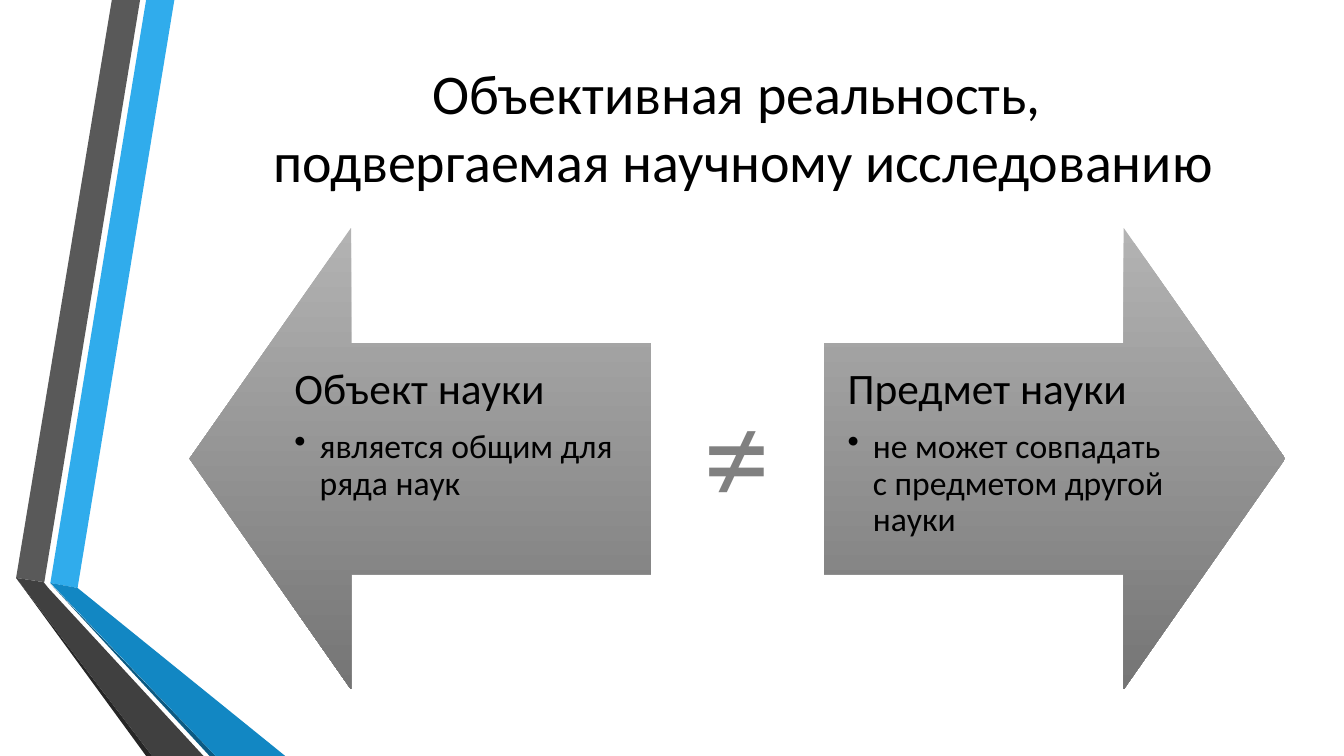
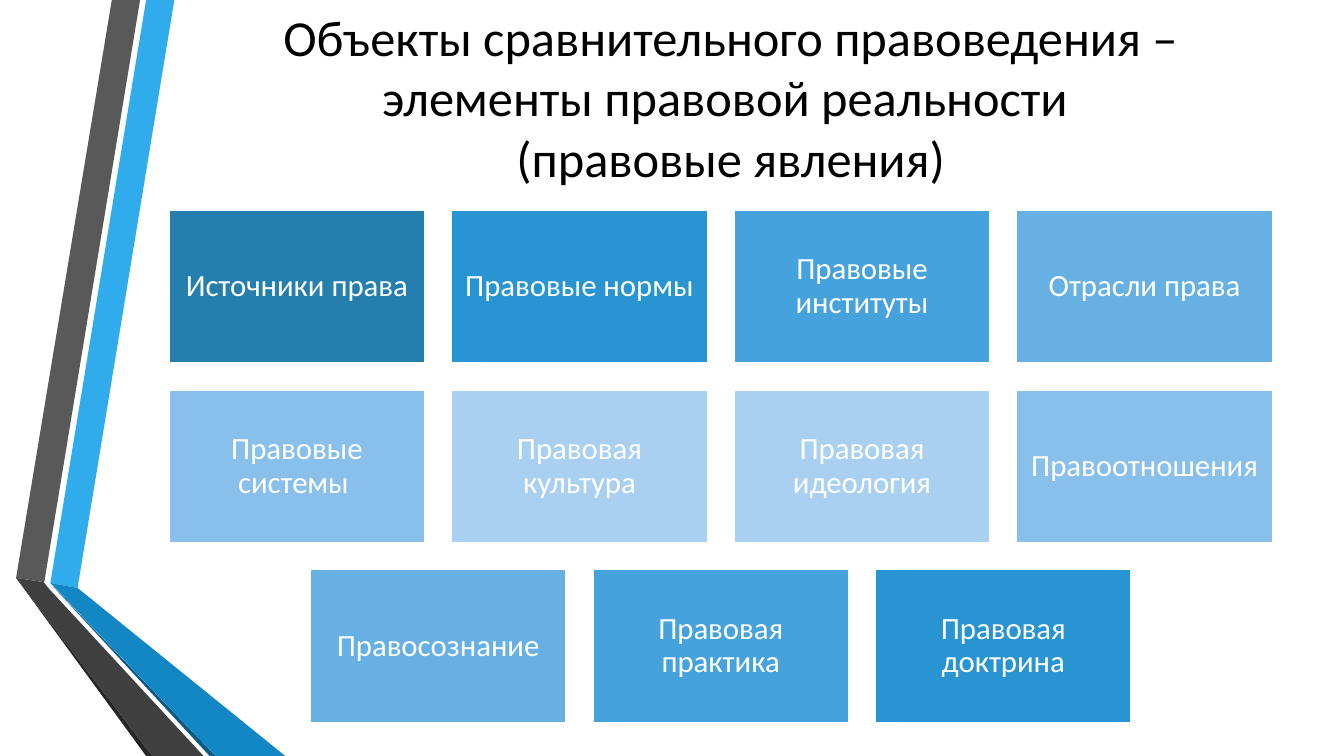
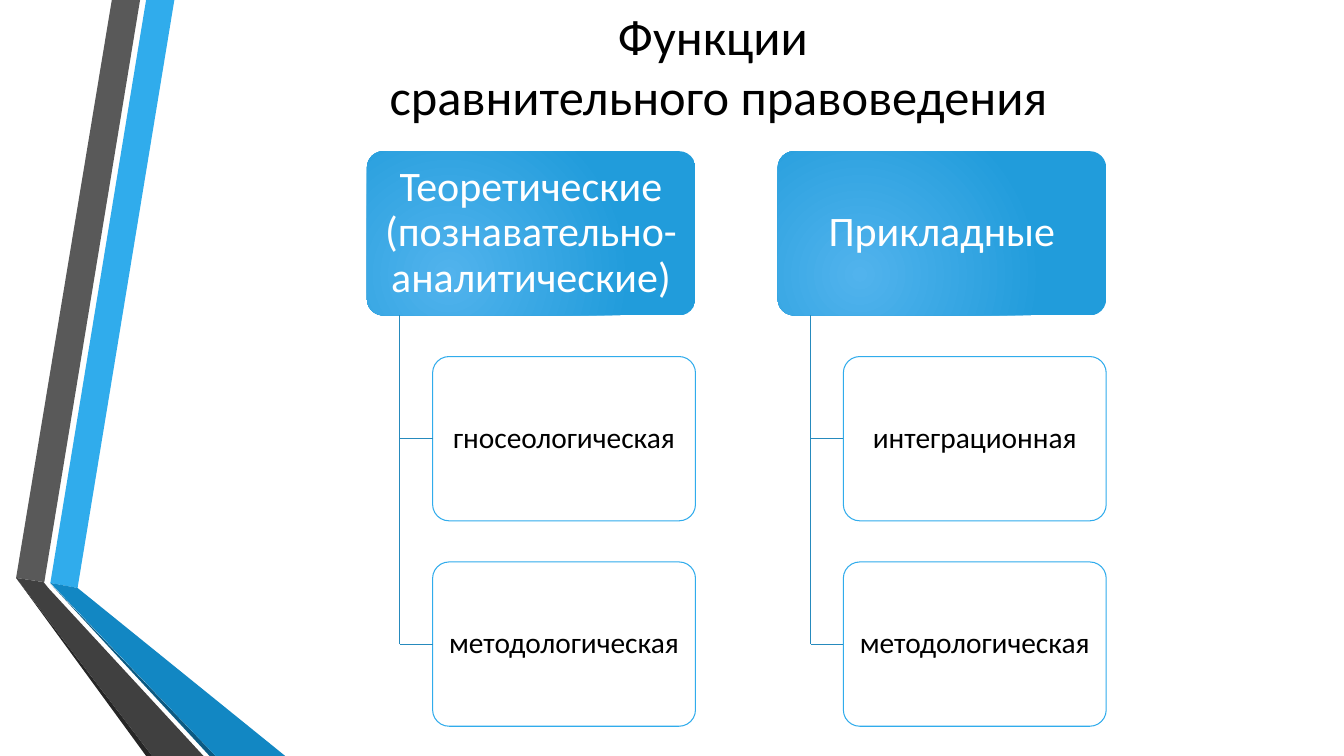
from dataclasses import dataclass

from lxml.etree import SubElement
from pptx import Presentation
from pptx.dml.color import RGBColor
from pptx.enum.shapes import MSO_CONNECTOR, MSO_SHAPE
from pptx.enum.text import MSO_ANCHOR, PP_ALIGN
from pptx.oxml.ns import qn
from pptx.util import Emu, Pt

COLUMNS, ROWS = 80, 45


@dataclass(frozen=True)
class Theme:
    font: str = "Calibri"
    ink: str = "000000"
    paper: str = "FFFFFF"
    sign: str = "808080"
    accent: str = "30ACEC"
    branch: str = "268ABD"
    arrow: tuple = ("B3B3B3", "757575")
    header: tuple = ("51B3ED", "219CDB")
    tiles: tuple = ("247FAF", "2994D2", "46A2DD", "66B0E4", "88BFEB", "A9D0F1")
    title_large: int = 40
    title: int = 36
    sign_size: int = 96
    arrow_head: int = 31
    arrow_point: int = 24
    tile_size: int = 22
    header_size: int = 30
    child_size: int = 21
    tight: float = 0.9
    thin: float = 0.75
    edge: float = 1.75


THEME = Theme()

# Folded ribbon at the left edge: colour and corners in grid units
RIBBON = [
    ("30ACEC", [(3, 34.7), (4.62, 35), (10.38, 0), (8.7, 0)]),
    ("595959", [(8.34, 0), (6.66, 0), (0.96, 34.4), (2.64, 34.65)]),
    ("262626", [(0.96, 34.4), (8.7, 45), (9.06, 45)]),
    ("0C5A82", [(3, 34.74), (12.48, 45), (12.84, 45)]),
    ("1287C3", [(3, 34.7), (12.84, 45), (16.98, 45), (4.62, 35)]),
    ("404040", [(12.12, 45), (2.88, 35), (2.6, 34.65), (0.96, 34.4), (9.06, 45)]),
]


def rgb(value):
    return RGBColor.from_string(value)


def assign(target, **values):
    for name, value in values.items():
        setattr(target, name, value)


class Deck:
    def __init__(self, theme):
        self.theme = theme
        self.file = Presentation()
        assign(self.file, slide_width=Emu(12192000), slide_height=Emu(6858000))
        self.column = self.file.slide_width / COLUMNS
        self.row = self.file.slide_height / ROWS
        self.slide = None

    def place(self, *lengths):
        """Turn alternating columns and rows into slide lengths."""
        return [Emu(round(length * (self.row if i % 2 else self.column)))
                for i, length in enumerate(lengths)]

    def new_slide(self):
        self.slide = self.file.slides.add_slide(self.file.slide_layouts[6])
        for color, corners in RIBBON:
            points = [self.place(*corner) for corner in corners]
            builder = self.slide.shapes.build_freeform(*points[0], scale=1.0)
            builder.add_line_segments(points[1:], close=True)
            self.finish(builder.convert_to_shape(), color)

    def finish(self, shape, fill, line=None, width=0):
        shape.shadow.inherit = False
        if isinstance(fill, tuple):
            shape.fill.gradient()
            for stop, color in zip(shape.fill.gradient_stops, fill):
                stop.color.rgb = rgb(color)
        else:
            shape.fill.solid()
            shape.fill.fore_color.rgb = rgb(fill)
        if line:
            shape.line.color.rgb = rgb(line)
            shape.line.width = Pt(width)
        else:
            shape.line.fill.background()

    def frame(self, holder, across=0.6, down=0.3, anchor=MSO_ANCHOR.MIDDLE):
        side, edge = self.place(across, down)
        assign(holder.text_frame, word_wrap=True, vertical_anchor=anchor,
               margin_left=side, margin_right=side,
               margin_top=edge, margin_bottom=edge)
        return holder.text_frame.paragraphs[0]

    def compose(self, paragraph, text, size, color, **layout):
        assign(paragraph, text=text, **layout)
        for run in paragraph.runs:
            assign(run.font, name=self.theme.font, size=Pt(size))
            run.font.color.rgb = rgb(color)

    def text(self, box, text, size, color, align):
        holder = self.slide.shapes.add_textbox(*self.place(*box))
        self.compose(self.frame(holder), text, size, color, alignment=align)

    def title(self, box, text, size):
        self.text(box, text, size, self.theme.ink, PP_ALIGN.CENTER)

    def shape(self, kind, box, fill, line=None, width=0):
        shape = self.slide.shapes.add_shape(kind, *self.place(*box))
        self.finish(shape, fill, line, width)
        return shape

    def label(self, shape, text, size, color, across, down):
        self.compose(self.frame(shape, across, down), text, size, color,
                     alignment=PP_ALIGN.CENTER, line_spacing=self.theme.tight)

    def arrow(self, kind, box, heading, point):
        arrow = self.shape(kind, box, self.theme.arrow)
        arrow.fill.gradient_angle = 270
        arrow.adjustments[0], arrow.adjustments[1] = 0.5, 0.35
        layout = dict(alignment=PP_ALIGN.LEFT, line_spacing=self.theme.tight)
        self.compose(self.frame(arrow, 1.44, 1.44, MSO_ANCHOR.TOP), heading,
                     self.theme.arrow_head, self.theme.ink,
                     space_after=Pt(11), **layout)
        bullet = arrow.text_frame.add_paragraph()
        self.compose(bullet, point, self.theme.arrow_point, self.theme.ink, **layout)
        props = bullet._p.get_or_add_pPr()
        indent = self.place(1.5)[0]
        props.set("marL", str(indent))
        props.set("indent", str(-indent))
        SubElement(props, qn("a:buChar")).set("char", "•")

    def tile(self, box, text, fill):
        tile = self.shape(MSO_SHAPE.RECTANGLE, box, fill,
                          self.theme.paper, self.theme.edge)
        self.label(tile, text, self.theme.tile_size, self.theme.paper, 0.54, 0.54)

    def header(self, box, text):
        header = self.shape(MSO_SHAPE.ROUNDED_RECTANGLE, box, self.theme.header)
        header.adjustments[0] = 0.1
        gradient = header._element.spPr.find(qn("a:gradFill"))
        glow = SubElement(gradient, qn("a:path"))
        glow.set("path", "circle")
        focus = SubElement(glow, qn("a:fillToRect"))
        for side, share in dict(l=50, t=100, r=100, b=50).items():
            focus.set(side, str(share * 1000))
        gradient.replace(gradient.find(qn("a:lin")), glow)
        self.label(header, text, self.theme.header_size, self.theme.paper, 0.36, 0.24)

    def child(self, box, text):
        child = self.shape(MSO_SHAPE.ROUNDED_RECTANGLE, box, self.theme.paper,
                           self.theme.accent, self.theme.thin)
        child.adjustments[0] = 0.1
        self.label(child, text, self.theme.child_size, self.theme.ink, 0.24, 0.18)
        return child

    def line(self, start, end, target=None):
        line = self.slide.shapes.add_connector(
            MSO_CONNECTOR.STRAIGHT, *self.place(*start, *end))
        line.line.color.rgb = rgb(self.theme.branch)
        line.line.width = Pt(self.theme.thin)
        SubElement(line._element.spPr, qn("a:effectLst"))
        if target is not None:
            line.end_connect(target, 1)


def object_and_subject(deck):
    deck.new_slide()
    deck.title((11.34, 1.74, 65.76, 11.52),
               "Объективная реальность, \vподвергаемая научному исследованию",
               deck.theme.title_large)
    side, top = 27.48, 13.56
    deck.arrow(MSO_SHAPE.LEFT_ARROW, (11.28, top, side, side),
               "Объект науки", "является общим для ряда наук")
    deck.arrow(MSO_SHAPE.RIGHT_ARROW, (49.02, top, side, side),
               "Предмет науки", "не может совпадать с предметом другой науки")
    deck.text((41.28, 21.66, 5.76, 10.32), "≠", deck.theme.sign_size,
              deck.theme.sign, PP_ALIGN.LEFT)


def legal_phenomena(deck):
    deck.new_slide()
    deck.title((10.62, 0, 65.76, 11.52),
               "Объекты сравнительного правоведения – элементы правовой "
               "реальности \v(правовые явления)", deck.theme.title)
    # Each tile: text and step on the colour scale
    tile_rows = [
        [("Источники права", 0), ("Правовые нормы", 1),
         ("Правовые институты", 2), ("Отрасли права", 3)],
        [("Правовые системы ", 4), ("Правовая культура", 5),
         ("Правовая идеология", 5), ("Правоотношения", 4)],
        [("Правосознание", 3), ("Правовая практика", 2), ("Правовая доктрина", 1)],
    ]
    width, height, gap = 15.29, 9.17, 1.53
    center, top = 42.9, 12.48
    for r, tiles in enumerate(tile_rows):
        left = center - (len(tiles) * (width + gap) - gap) / 2
        for c, (text, step) in enumerate(tiles):
            deck.tile((left + c * (width + gap), top + r * (height + gap),
                       width, height), text, deck.theme.tiles[step])


def functions(deck):
    deck.new_slide()
    deck.title((9.9, 0, 65.76, 7.8),
               "Функции \vсравнительного правоведения", deck.theme.title)
    groups = [
        ("Теоретические (познавательно-аналитические)",
         ["гносеологическая", "методологическая"]),
        ("Прикладные", ["интеграционная", "методологическая"]),
    ]
    top, height = 9, 9.78
    width, pitch = 2 * height, 1.25 * height
    for g, (heading, children) in enumerate(groups):
        left = 21.84 + g * 1.25 * width
        trunk = left + 0.1 * width
        deck.header((left, top, width, height), heading)
        for n, text in enumerate(children, 1):
            child_left, child_top = left + 0.2 * width, top + n * pitch
            middle = child_top + height / 2
            child = deck.child((child_left, child_top, 0.8 * width, height), text)
            deck.line((trunk, middle), (child_left, middle), child)
        deck.line((trunk, top + height), (trunk, middle))


def main():
    deck = Deck(THEME)
    object_and_subject(deck)
    legal_phenomena(deck)
    functions(deck)
    deck.file.save("out.pptx")


if __name__ == "__main__":
    main()
